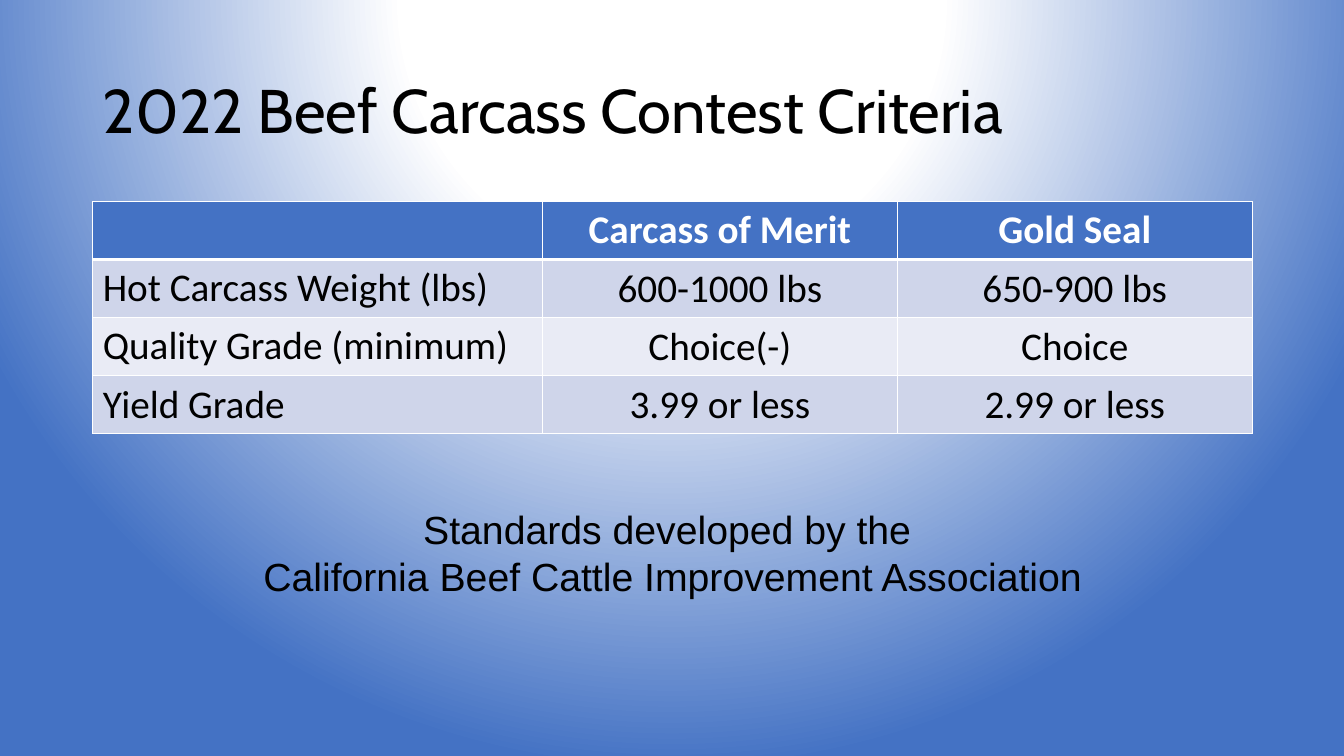
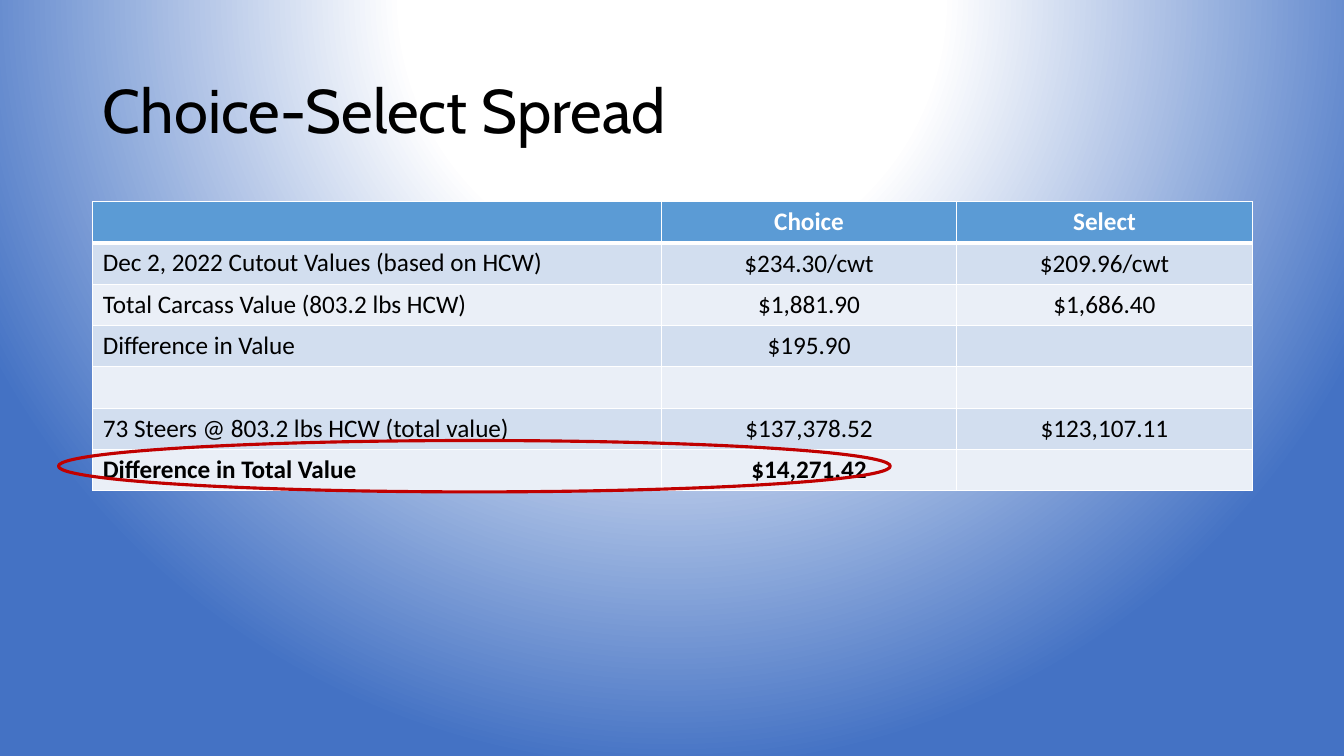
from dataclasses import dataclass

from lxml import etree
from pptx import Presentation
from pptx.dml.color import RGBColor
from pptx.enum import shapes, text
from pptx.oxml.ns import qn
from pptx.util import Inches, Pt

BLACK = RGBColor(0x00, 0x00, 0x00)
WHITE = RGBColor(0xFF, 0xFF, 0xFF)
BLUE = RGBColor(0x44, 0x72, 0xC4)
BLUE_BAND = RGBColor(0xCF, 0xD5, 0xEA)
BLUE_PALE = RGBColor(0xE9, 0xEB, 0xF5)
SKY = RGBColor(0x5B, 0x9B, 0xD5)
SKY_BAND = RGBColor(0xD2, 0xDE, 0xEF)
SKY_PALE = RGBColor(0xEA, 0xEF, 0xF7)
RED = RGBColor(0xC0, 0x00, 0x00)

LEFT = Inches(0.92)
WIDTH = Inches(11.5)
TABLE_TOP = Inches(2)


@dataclass(frozen=True)
class TableSpec:
    rows: list[tuple[str, str, str]]
    columns: tuple[float, float, float]
    row_height: float
    size: int
    header: RGBColor
    band: RGBColor
    pale: RGBColor
    bold_rows: tuple[int, ...] = (0,)


CRITERIA = TableSpec(
    rows=[
        ("", "Carcass of Merit", "Gold Seal"),
        ("Hot Carcass Weight (lbs)", "600-1000 lbs", "650-900 lbs"),
        ("Quality Grade (minimum)", "Choice(-)", "Choice"),
        ("Yield Grade", "3.99 or less", "2.99 or less"),
    ],
    columns=(4.46, 3.52, 3.52),
    row_height=0.57,
    size=28,
    header=BLUE,
    band=BLUE_BAND,
    pale=BLUE_PALE,
)

SPREAD = TableSpec(
    rows=[
        ("", "Choice", "Select"),
        ("Dec 2, 2022 Cutout Values (based on HCW)", "$234.30/cwt", "$209.96/cwt"),
        ("Total Carcass Value (803.2 lbs HCW)", "$1,881.90", "$1,686.40"),
        ("Difference in Value", "$195.90", ""),
        ("", "", ""),
        ("73 Steers @ 803.2 lbs HCW (total value)", "$137,378.52", "$123,107.11"),
        ("Difference in Total Value", "$14,271.42", ""),
    ],
    columns=(5.64, 2.93, 2.93),
    row_height=0.41,
    size=18,
    header=SKY,
    band=SKY_BAND,
    pale=SKY_PALE,
    bold_rows=(0, 6),
)


def add_color(parent, color: RGBColor) -> None:
    etree.SubElement(parent, qn("a:srgbClr"), val=str(color))


def paint_background(master) -> None:
    master.background.fill.gradient()
    gradient = next(master.element.iter(qn("a:gradFill")))
    for child in list(gradient):
        gradient.remove(child)
    stops = etree.SubElement(gradient, qn("a:gsLst"))
    for percent, color in ((0, WHITE), (35, WHITE), (100, BLUE)):
        add_color(etree.SubElement(stops, qn("a:gs"), pos=str(percent * 1000)), color)
    glow = etree.SubElement(gradient, qn("a:path"), path="circle")
    etree.SubElement(glow, qn("a:fillToRect"), l="50000", t="-80000", r="50000", b="180000")


def add_run(paragraph, words: str, font: str, size: int, color: RGBColor = BLACK,
            bold: bool = False) -> None:
    run = paragraph.add_run()
    run.text = words
    run.font.name = font
    run.font.size = Pt(size)
    run.font.bold = bold
    run.font.color.rgb = color


def add_titled_slide(prs, words: str):
    slide = prs.slides.add_slide(prs.slide_layouts[5])
    title = slide.shapes.title
    title.left, title.top, title.width, title.height = LEFT, Inches(0.4), WIDTH, Inches(1.45)
    frame = title.text_frame
    frame.word_wrap = True
    frame.auto_size = text.MSO_AUTO_SIZE.NONE
    frame.vertical_anchor = text.MSO_ANCHOR.MIDDLE
    paragraph = frame.paragraphs[0]
    paragraph.alignment = text.PP_ALIGN.LEFT
    paragraph.line_spacing = 0.9
    add_run(paragraph, words, "Cabin", 44)
    return slide


def border_cell(cell, row: int) -> None:
    properties = cell._tc.get_or_add_tcPr()
    top = 3 if row == 1 else 1
    bottom = 3 if row == 0 else 1
    for side, points in (("L", 1), ("R", 1), ("T", top), ("B", bottom)):
        line = etree.SubElement(properties, qn(f"a:ln{side}"), w=str(Pt(points)))
        add_color(etree.SubElement(line, qn("a:solidFill")), WHITE)


def add_table(slide, spec: TableSpec) -> None:
    height = Inches(spec.row_height)
    table = slide.shapes.add_table(
        len(spec.rows), len(spec.columns), LEFT, TABLE_TOP, WIDTH, height * len(spec.rows)
    ).table
    for column, width in zip(table.columns, spec.columns):
        column.width = Inches(width)
    for r, values in enumerate(spec.rows):
        table.rows[r].height = height
        fill = spec.header if r == 0 else spec.band if r % 2 else spec.pale
        for c, value in enumerate(values):
            cell = table.cell(r, c)
            border_cell(cell, r)
            cell.fill.solid()
            cell.fill.fore_color.rgb = fill
            if not value:
                continue
            paragraph = cell.text_frame.paragraphs[0]
            if c > 0:
                cell.vertical_anchor = text.MSO_ANCHOR.MIDDLE
                paragraph.alignment = text.PP_ALIGN.CENTER
            add_run(paragraph, value, "Calibri", spec.size,
                    WHITE if r == 0 else BLACK, r in spec.bold_rows)


def add_source_note(slide, lines: tuple[str, ...]) -> None:
    frame = slide.shapes.add_textbox(LEFT, Inches(4.96), WIDTH, Inches(1.04)).text_frame
    frame.word_wrap = True
    frame.auto_size = text.MSO_AUTO_SIZE.SHAPE_TO_FIT_TEXT
    frame.margin_left = frame.margin_right = Inches(0.05)
    frame.margin_top = frame.margin_bottom = Inches(0.05)
    for i, line in enumerate(lines):
        paragraph = frame.add_paragraph() if i else frame.paragraphs[0]
        paragraph.alignment = text.PP_ALIGN.CENTER
        add_run(paragraph, line, "Arial", 28)


def circle_total(slide) -> None:
    ring = slide.shapes.add_shape(
        shapes.MSO_SHAPE.OVAL, Inches(0.58), Inches(4.37), Inches(8.25), Inches(0.51)
    )
    ring.shadow.inherit = False
    ring.fill.background()
    ring.line.color.rgb = RED
    ring.line.width = Pt(2.25)


def main() -> None:
    prs = Presentation()
    prs.slide_width, prs.slide_height = Inches(13.33), Inches(7.5)
    paint_background(prs.slide_master)

    criteria = add_titled_slide(prs, "2022 Beef Carcass Contest Criteria")
    add_table(criteria, CRITERIA)
    add_source_note(criteria, (
        "Standards developed by the ",
        "California Beef Cattle Improvement Association",
    ))

    spread = add_titled_slide(prs, "Choice-Select Spread")
    add_table(spread, SPREAD)
    circle_total(spread)

    prs.save("out.pptx")


if __name__ == "__main__":
    main()
